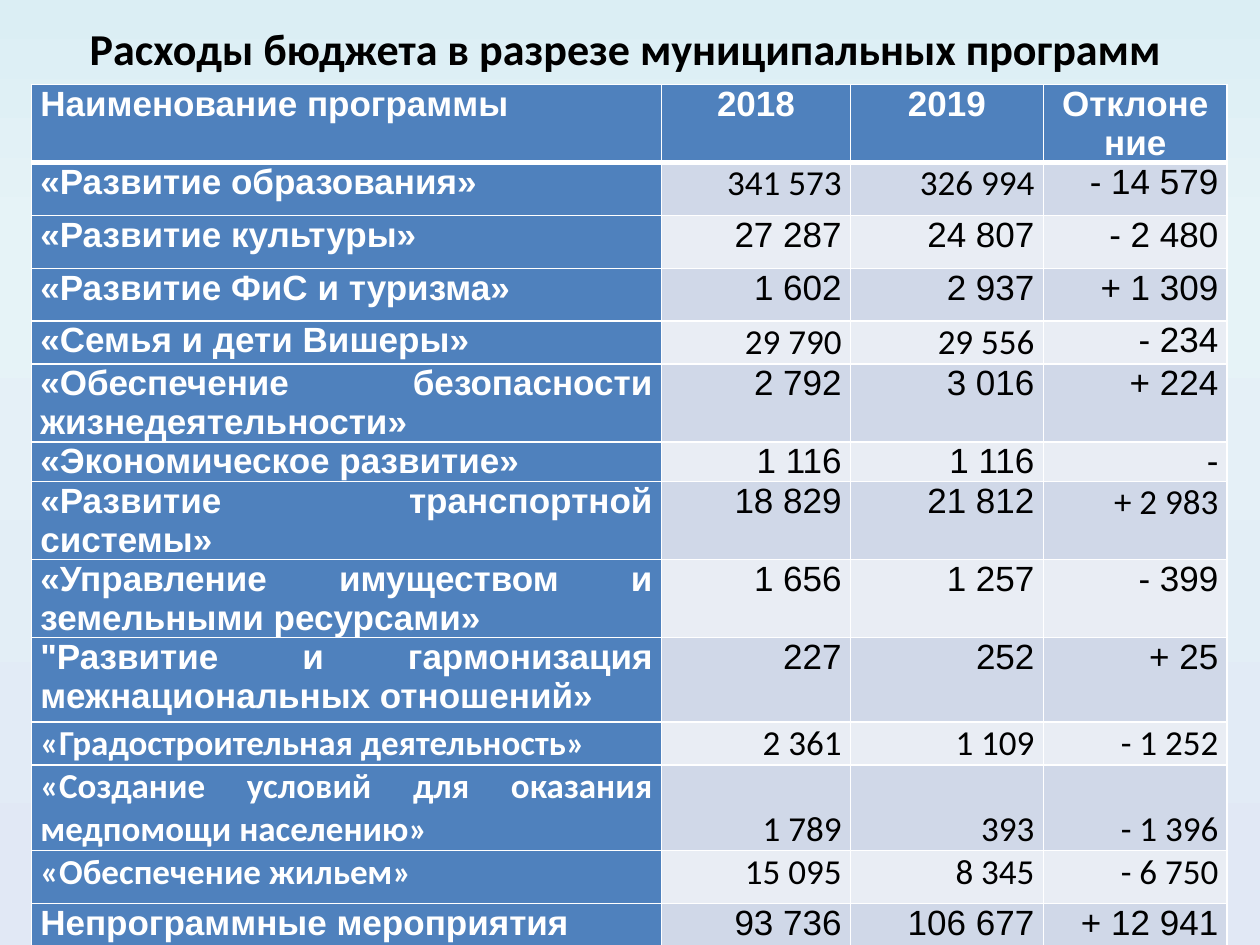
import copy

import pptx
import pptx.dml.color
import pptx.enum.text
import pptx.oxml
import pptx.oxml.ns
import pptx.util

Inches, Pt = pptx.util.Inches, pptx.util.Pt
Align, Anchor = pptx.enum.text.PP_ALIGN, pptx.enum.text.MSO_ANCHOR

# Content
TITLE = "Расходы бюджета в разрезе муниципальных программ"
HEADERS = ["Наименование программы", "2018", "2019", "Отклоне\nние"]
FONTS = {"A": "Arial", "C": "Calibri"}
# Row height, font key of each column, programme, 2018, 2019, deviation
ROWS = [
    (0.42, "ACCA", "«Развитие образования»", "341 573", "326 994", "- 14 579"),
    (0.42, "AAAA", "«Развитие культуры»", "27 287", "24 807", "- 2 480"),
    (0.42, "AAAA", "«Развитие ФиС и туризма»", "1 602", "2 937", "+ 1 309"),
    (0.31, "ACCA", "«Семья и дети Вишеры»", "29 790", "29 556", "- 234"),
    (0.59, "AAAA", "«Обеспечение безопасности жизнедеятельности»", "2 792", "3 016", "+ 224"),
    (0.31, "AAAA", "«Экономическое развитие»", "1 116", "1 116", "-"),
    (0.33, "AAAC", "«Развитие транспортной системы»", "18 829", "21 812", "+ 2 983"),
    (0.59, "AAAA", "«Управление имуществом и земельными ресурсами»", "1 656", "1 257", "- 399"),
    (0.67, "AAAA", "\"Развитие и гармонизация межнациональных отношений»", "227", "252", "+ 25"),
    (0.33, "CCCC", "«Градостроительная деятельность»", "2 361", "1 109", "- 1 252"),
    (0.42, "CCCC", "«Создание условий для оказания медпомощи населению»", "1 789", "393", "- 1 396"),
    (0.42, "CCCC", "«Обеспечение жильем»", "15 095", "8 345", "- 6 750"),
    (0.42, "AAAA", "Непрограммные мероприятия", "93 736", "106 677", "+ 12 941"),
]
BOTTOM_ROW = 11  # figures stand level with the second line of the name

# Layout and colours
HEADER_HEIGHT = 0.59
COLUMNS = [5, 1.5, 1.53, 1.46]
COLORS = {"head": "4F81BD", "odd": "D0D8E8", "even": "E9EDF4", "light": "FFFFFF", "dark": "000000"}
BACKGROUND = [(0, "DBEEF4"), (0.25, "E6F3F7"), (1, "E1E8F5")]


def rgb(value):
    return pptx.dml.color.RGBColor.from_string(value)


def write(frame, text, font="Arial", size=20, color="dark", bold=False, align=Align.RIGHT):
    frame.text = text
    frame.word_wrap = True
    for para in frame.paragraphs:
        para.alignment = align
        for span in para.runs:
            span.font.name = font
            span.font.size = Pt(size)
            span.font.bold = bold
            span.font.color.rgb = rgb(COLORS[color])


def format_cell(cell, fill, top, bottom):
    cell.margin_left = cell.margin_right = Inches(0.07)
    cell.margin_top = cell.margin_bottom = 0
    cell.fill.solid()
    cell.fill.fore_color.rgb = rgb(COLORS[fill])
    # Borders come before the fill in the cell properties
    properties = cell._tc.get_or_add_tcPr()
    for place, (side, width) in enumerate([("L", 1), ("R", 1), ("T", top), ("B", bottom)]):
        properties.insert(place, pptx.oxml.parse_xml(
            f'<a:ln{side} {pptx.oxml.ns.nsdecls("a")} w="{Pt(width)}"><a:solidFill>'
            f'<a:srgbClr val="{COLORS["light"]}"/></a:solidFill></a:ln{side}>'))


deck = pptx.Presentation()
deck.slide_width, deck.slide_height = Inches(10), Inches(7.5)
page = deck.slides.add_slide(deck.slide_layouts[5])

# Background gradient, from top to bottom
backdrop = page.background.fill
backdrop.gradient()
backdrop.gradient_angle = 270
stop_list = page.element.xpath(".//a:gsLst")[0]
stop_list.append(copy.deepcopy(stop_list[-1]))
for stop, (position, color) in zip(backdrop.gradient_stops, BACKGROUND):
    stop.position = position
    stop.color.rgb = rgb(color)

# Title
title = page.shapes.title
title.left, title.top, title.width, title.height = map(Inches, (0.28, 0.17, 9.37, 0.42))
write(title.text_frame, TITLE, font="Calibri", size=25.2, bold=True, align=Align.CENTER)
title.text_frame.vertical_anchor = Anchor.MIDDLE

# Table
heights = [HEADER_HEIGHT] + [row[0] for row in ROWS]
table = page.shapes.add_table(
    len(heights), len(COLUMNS), Inches(0.25), Inches(0.67),
    Inches(sum(COLUMNS)), Inches(sum(heights))).table
for column, width in zip(table.columns, COLUMNS):
    column.width = Inches(width)
for line, height in zip(table.rows, heights):
    line.height = Inches(height)

lines = [("AAAA", *HEADERS)] + [row[1:] for row in ROWS]
for row, (fonts, *texts) in enumerate(lines):
    for column, (key, text) in enumerate(zip(fonts, texts)):
        cell = table.cell(row, column)
        heading = row == 0 or column == 0
        align = Align.JUSTIFY if column == 0 else Align.CENTER if row == 0 else Align.RIGHT
        write(cell.text_frame, text, font=FONTS[key], bold=heading,
              color="light" if heading else "dark", align=align)
        format_cell(cell, "head" if heading else "odd" if row % 2 else "even",
                    top=3 if row == 1 else 1, bottom=3 if row == 0 else 1)
        at_bottom = row == BOTTOM_ROW and column > 0
        cell.vertical_anchor = Anchor.BOTTOM if at_bottom else Anchor.TOP

deck.save("out.pptx")
